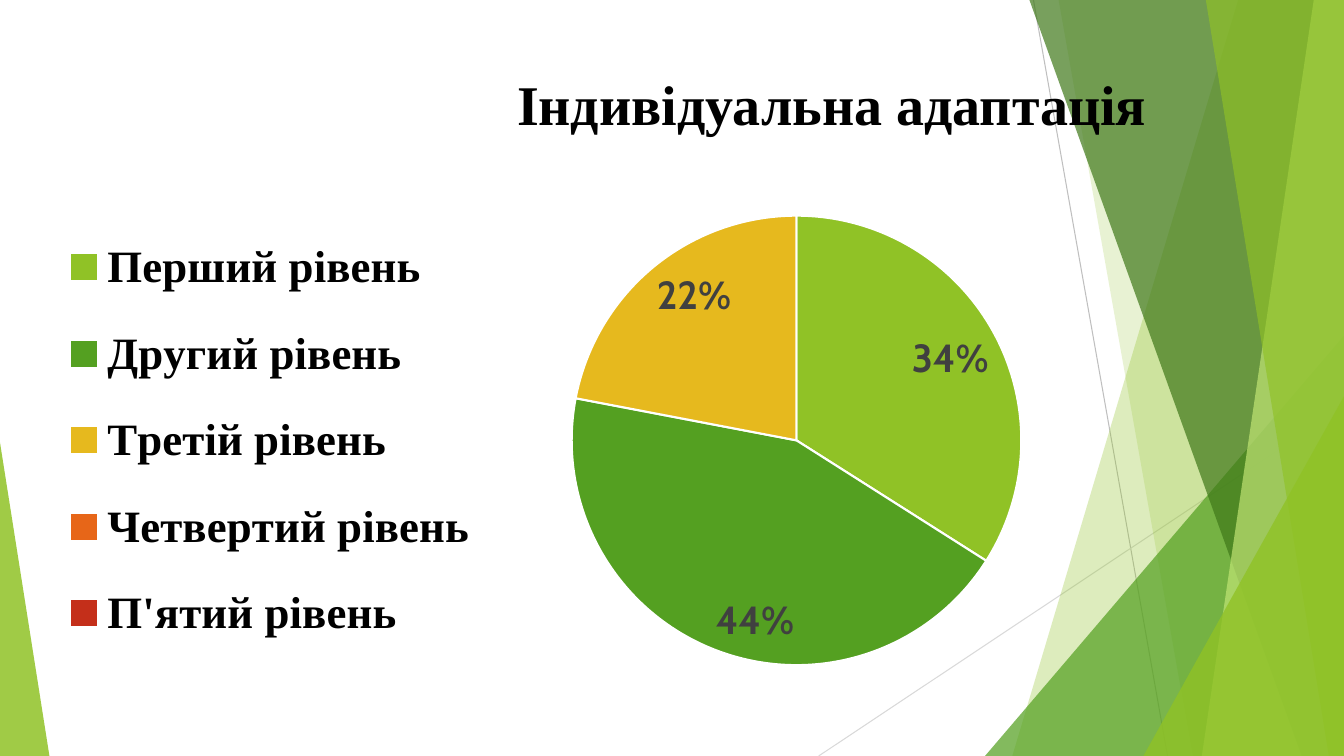
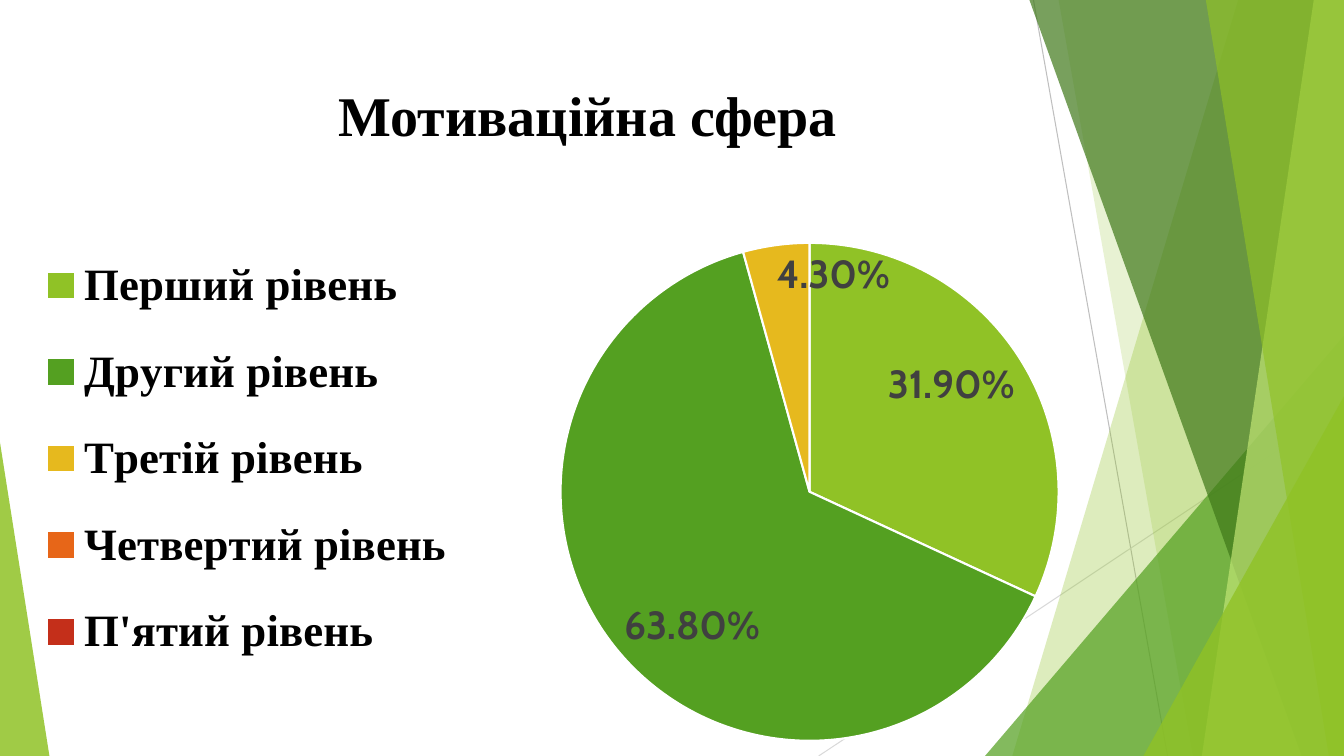
"""Build two pie chart slides on a shared backdrop of green facets."""
import lxml.etree
import pptx
import pptx.chart.data
import pptx.dml.color
import pptx.enum.chart
import pptx.enum.shapes
import pptx.enum.text
import pptx.oxml.ns
import pptx.util

Inches = pptx.util.Inches
Pt = pptx.util.Pt
qn = pptx.oxml.ns.qn

WIDTH, HEIGHT = 13.33, 7.5
COLORS = {
    "white": "FFFFFF", "text": "000000", "label": "404040",
    "grey": "BFBFBF", "silver": "D9D9D9",
    "lime": "90C226", "green": "54A021", "forest": "3F7819", "pale": "C0E474",
    "gold": "E6B91E", "orange": "E76618", "red": "C42F1A",
}
LEVELS = {
    "Перший рівень": "lime",
    "Другий рівень": "green",
    "Третій рівень": "gold",
    "Четвертий рівень": "orange",
    "П'ятий рівень": "red",
}


class Deck:
    """Hold the shared style and the slide being built."""

    heading_font = "Times New Roman"
    body_font = "Cabin"
    title_size = (8, 0.9)
    legend_size = (4.3, 4.66)

    def __init__(self):
        """Open a wide presentation with a bare title layout."""
        self.presentation = pptx.Presentation()
        self.presentation.slide_width = Inches(WIDTH)
        self.presentation.slide_height = Inches(HEIGHT)
        self.layout = self.presentation.slide_layouts[5]
        for footer in list(self.layout.placeholders):
            if footer.placeholder_format.idx != 0:
                footer.element.getparent().remove(footer.element)
        self.slide = None

    def color(self, key):
        """Return the named colour."""
        return pptx.dml.color.RGBColor.from_string(COLORS[key])

    def style_font(self, font, family, size, color):
        """Apply a bold style to a font."""
        font.name = family
        font.size = Pt(size)
        font.bold = True
        font.color.rgb = self.color(color)

    def start_slide(self):
        """Add a slide and make it current."""
        self.slide = self.presentation.slides.add_slide(self.layout)

    def hairline(self, start, end, color):
        """Draw a thin straight line."""
        hairline = self.slide.shapes.add_connector(
            pptx.enum.shapes.MSO_CONNECTOR.STRAIGHT,
            *(Inches(value) for value in start + end))
        hairline.line.color.rgb = self.color(color)
        hairline.line.width = Pt(0.75)
        lxml.etree.SubElement(hairline.element.spPr, qn("a:effectLst"))

    def tint(self, facet, color, opacity):
        """Give a facet a translucent fill without outline or shadow."""
        facet.shadow.inherit = False
        facet.fill.solid()
        facet.fill.fore_color.rgb = self.color(color)
        for tone in facet.element.spPr.iter(qn("a:srgbClr")):
            lxml.etree.SubElement(tone, qn("a:alpha"), val=str(opacity * 1000))
        facet.line.fill.background()

    def band(self, top_x, bottom_x, color, opacity):
        """Draw a full-height band reaching the right edge."""
        corners = [(Inches(x), Inches(y)) for x, y in (
            (top_x, 0), (WIDTH, 0), (WIDTH, HEIGHT), (bottom_x, HEIGHT))]
        outline = self.slide.shapes.build_freeform(*corners[0], scale=1.0)
        outline.add_line_segments(corners[1:], close=True)
        self.tint(outline.convert_to_shape(), color, opacity)

    def wedge(self, left, top, width, apex, color, opacity):
        """Draw a right triangle standing on the bottom edge."""
        wedge = self.slide.shapes.add_shape(
            pptx.enum.shapes.MSO_SHAPE.ISOSCELES_TRIANGLE,
            Inches(left), Inches(top), Inches(width), Inches(HEIGHT - top))
        wedge.adjustments[0] = apex
        self.tint(wedge, color, opacity)

    def share_backdrop(self):
        """Move the drawn facets to the layout, behind its title."""
        facets = [shape for shape in self.slide.shapes if not shape.is_placeholder]
        for position, facet in enumerate(facets, start=2):
            self.layout.shapes.element.insert(position, facet.element)

    def title(self, text, center):
        """Place the slide title around a centre point."""
        title = self.slide.shapes.title
        width, height = self.title_size
        title.left = Inches(center[0] - width / 2)
        title.top = Inches(center[1] - height / 2)
        title.width, title.height = Inches(width), Inches(height)
        frame = title.text_frame
        frame.text = text
        frame.word_wrap = True
        frame.vertical_anchor = pptx.enum.text.MSO_ANCHOR.MIDDLE
        paragraph = frame.paragraphs[0]
        paragraph.alignment = pptx.enum.text.PP_ALIGN.CENTER
        self.style_font(paragraph.runs[0].font, self.heading_font, 40, "text")

    def arrange(self, part, position, frame, box, inner=False):
        """Fix a chart part to a box given in slide inches."""
        for automatic in part.findall(qn("c:layout")):
            part.remove(automatic)
        layout = lxml.etree.Element(qn("c:layout"))
        manual = lxml.etree.SubElement(layout, qn("c:manualLayout"))
        settings = {"layoutTarget": "inner"} if inner else {}
        settings.update(xMode="edge", yMode="edge")
        left, top, width, height = frame
        settings.update(
            x=(box[0] - left) / width, y=(box[1] - top) / height,
            w=box[2] / width, h=box[3] / height)
        for key, value in settings.items():
            lxml.etree.SubElement(manual, qn("c:" + key), val=str(value))
        part.insert(position, layout)

    def pie(self, shares, number_format, frame, center, diameter, legend_at):
        """Add a pie of the levels with a legend on its left."""
        data = pptx.chart.data.CategoryChartData(number_format=number_format)
        data.categories = list(LEVELS)
        data.add_series("Series 1", shares)
        chart = self.slide.shapes.add_chart(
            pptx.enum.chart.XL_CHART_TYPE.PIE,
            *(Inches(value) for value in frame), data).chart
        chart.has_title = False
        chart.font.name = self.body_font
        chart.font.size = Pt(10)
        chart.font.color.rgb = self.color("text")

        chart.has_legend = True
        chart.legend.position = pptx.enum.chart.XL_LEGEND_POSITION.LEFT
        chart.legend.include_in_layout = False
        self.style_font(chart.legend.font, self.heading_font, 32, "text")

        plot = chart.plots[0]
        plot.vary_by_categories = True
        for index, color in enumerate(LEVELS.values()):
            slice_format = plot.series[0].points[index].format
            slice_format.fill.solid()
            slice_format.fill.fore_color.rgb = self.color(color)
            slice_format.line.color.rgb = self.color("white")
            slice_format.line.width = Pt(1.5)

        plot.has_data_labels = True
        labels = plot.data_labels
        labels.show_value = True
        labels.show_percentage = False
        labels.number_format = number_format
        labels.number_format_is_linked = False
        labels.position = pptx.enum.chart.XL_LABEL_POSITION.INSIDE_END
        self.style_font(labels.font, self.body_font, 28, "label")

        circle = (center[0] - diameter / 2, center[1] - diameter / 2,
                  diameter, diameter)
        plot_area = next(chart.element.iter(qn("c:plotArea")))
        legend = next(chart.element.iter(qn("c:legend")))
        self.arrange(plot_area, 0, frame, circle, inner=True)
        self.arrange(legend, 1, frame, legend_at + self.legend_size)


def draw_backdrop(deck):
    """Draw the facets that every slide shares."""
    deck.hairline((10.25, 0), (11.58, HEIGHT), "grey")
    deck.hairline((WIDTH, 4.03), (8.12, HEIGHT), "silver")
    deck.band(12.28, 10.04, "lime", 30)
    deck.band(10.5, 11.83, "lime", 20)
    deck.wedge(9.77, 3.33, 3.56, 1, "green", 72)
    deck.band(10.21, 12.91, "forest", 70)
    deck.band(13.03, 11.92, "pale", 70)
    deck.band(11.96, 13.18, "lime", 65)
    deck.wedge(11.34, 3.93, 1.99, 1, "lime", 80)
    deck.wedge(0, 4.39, 0.49, 0, "lime", 85)
    deck.share_backdrop()


def main():
    """Build and save the slides."""
    deck = Deck()

    deck.start_slide()
    draw_backdrop(deck)
    deck.title("Індивідуальна адаптація", center=(8.25, 1.02))
    deck.pie((0.34, 0.44, 0.22, 0, 0), "0%;;",
             frame=(0.49, 0.63, 11.3, 6.51), center=(7.9, 4.37),
             diameter=4.46, legend_at=(0.53, 2.04))

    deck.start_slide()
    deck.title("Мотиваційна сфера", center=(5.83, 1.13))
    deck.pie((0.319, 0.638, 0.043, 0, 0), "0.00%;;",
             frame=(0.27, 0.57, 11.14, 6.93), center=(8.03, 4.88),
             diameter=4.94, legend_at=(0.3, 2.22))

    deck.presentation.save("out.pptx")


if __name__ == "__main__":
    main()
